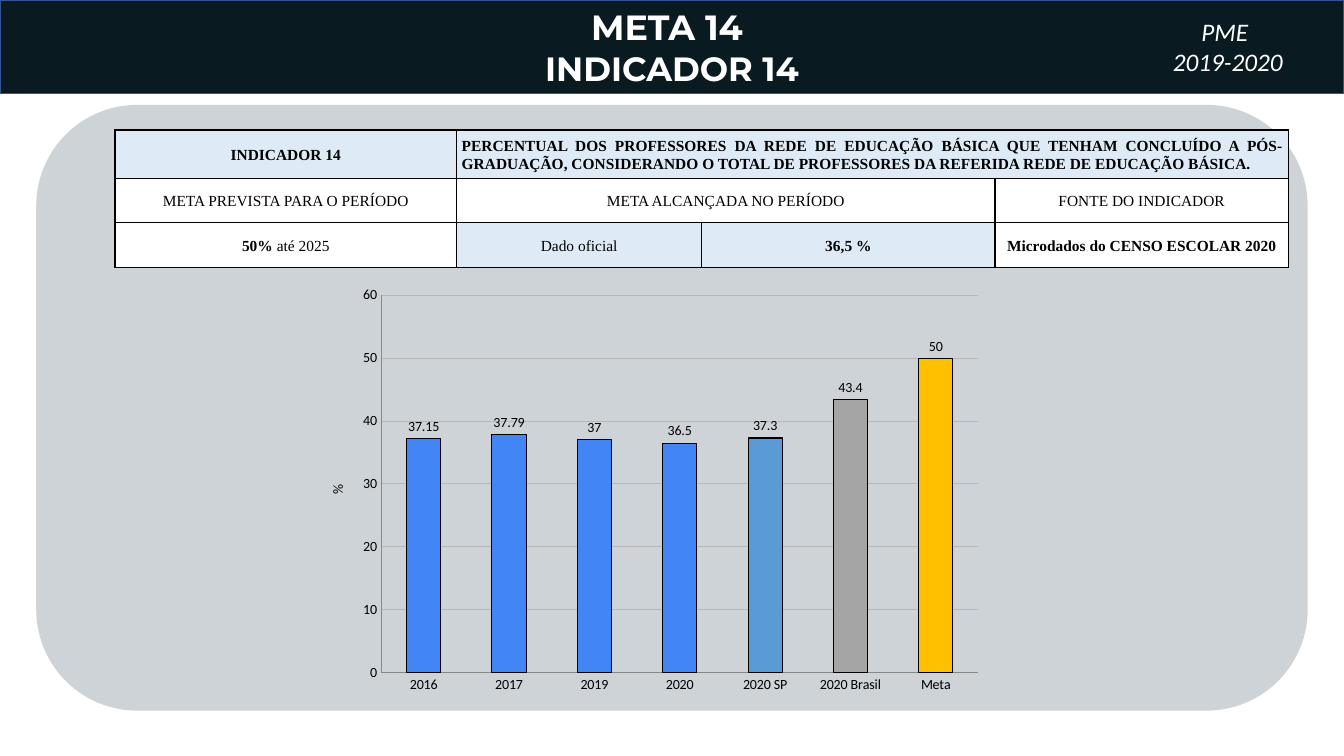
import pptx
import pptx.chart.data
import pptx.dml.color
import pptx.enum.chart
import pptx.enum.shapes
import pptx.enum.text
import pptx.oxml
import pptx.oxml.ns
import pptx.util
from dataclasses import dataclass

Pt = pptx.util.Pt
Inches = pptx.util.Inches
Align = pptx.enum.text.PP_ALIGN
Middle = pptx.enum.text.MSO_ANCHOR.MIDDLE
Shape = pptx.enum.shapes.MSO_SHAPE
qn = pptx.oxml.ns.qn


def rgb(code):
    return pptx.dml.color.RGBColor.from_string(code)


@dataclass(frozen=True)
class Theme:
    navy: str = "0A1A21"
    edge: str = "325491"
    panel: str = "CED3D8"
    pale: str = "DEEBF7"
    white: str = "FFFFFF"
    black: str = "000000"
    grid: str = "B7B7B7"
    axis: str = "888888"
    blue: str = "4285F4"
    state: str = "5B9BD5"
    nation: str = "A5A5A5"
    goal: str = "FFC000"
    head: str = "Montserrat"
    body: str = "Calibri"
    serif: str = "Times New Roman"
    title: int = 25
    sub: int = 24
    period: int = 18
    cell: int = 11
    chart: int = 10


class Page:
    def __init__(self, deck, theme):
        self.deck = deck
        self.theme = theme
        self.slide = deck.slides.add_slide(deck.slide_layouts[6])

    def wide(self, share):
        return int(self.deck.slide_width * share / 100)

    def high(self, share):
        return int(self.deck.slide_height * share / 100)

    def area(self, left, top, width, height):
        return self.wide(left), self.high(top), self.wide(width), self.high(height)

    def font(self, font, face, size, color, bold=None, italic=None):
        font.name, font.size = face, Pt(size)
        font.bold, font.italic = bold, italic
        font.color.rgb = rgb(color)

    def block(self, kind, box, fill, line=None):
        shape = self.slide.shapes.add_shape(kind, *self.area(*box))
        shape.shadow.inherit = False
        shape.fill.solid()
        shape.fill.fore_color.rgb = rgb(fill)
        if line:
            shape.line.color.rgb = rgb(line)
            shape.line.width = Pt(1)
        else:
            shape.line.fill.background()
        return shape

    def label(self, box):
        shape = self.slide.shapes.add_textbox(*self.area(*box))
        shape.text_frame.word_wrap = True
        return shape

    def words(self, shape, lines, face, sizes, **style):
        frame = shape.text_frame
        frame.text = "\n".join(lines)
        for para, size in zip(frame.paragraphs, sizes):
            para.alignment = Align.CENTER
            self.font(para.font, face, size, self.theme.white, **style)

    def border(self, cell):
        props = cell._tc.get_or_add_tcPr()
        for side in "LRTB":
            props.append(pptx.oxml.parse_xml(
                f'<a:ln{side} {pptx.oxml.ns.nsdecls("a")} w="12700"><a:solidFill>'
                f'<a:srgbClr val="{self.theme.black}"/></a:solidFill></a:ln{side}>'))

    def table(self, left, top, cols, rows, spans, cells):
        box = self.area(left, top, sum(cols), sum(rows))
        table = self.slide.shapes.add_table(len(rows), len(cols), *box).table
        table.first_row = table.horz_banding = False
        for col, width in zip(table.columns, cols):
            col.width = self.wide(width)
        for row, height in zip(table.rows, rows):
            row.height = self.high(height)
        for start, end in spans:
            table.cell(*start).merge(table.cell(*end))
        for cell in table.iter_cells():
            self.border(cell)
        for (row, col), (runs, fill, align) in cells.items():
            self.fill(table.cell(row, col), runs, fill, align)

    def fill(self, cell, runs, fill, align):
        cell.fill.solid()
        cell.fill.fore_color.rgb = rgb(fill)
        cell.vertical_anchor = Middle
        cell.margin_left = cell.margin_right = Inches(0.05)
        cell.margin_top, cell.margin_bottom = Inches(0.01), 0
        para = cell.text_frame.paragraphs[0]
        para.alignment, para.line_spacing, para.space_after = align, 1.07, Pt(8)
        bolds = {bold for _, bold in runs}
        shared = bolds.pop() if len(bolds) == 1 else None
        self.font(para.font, self.theme.serif, self.theme.cell, self.theme.black, shared)
        for text, bold in runs:
            run = para.add_run()
            run.text = text
            if shared is None:
                run.font.bold = bold

    def place(self, node, index, **spots):
        for old in node.findall(qn("c:layout")):
            node.remove(old)
        target = '<c:layoutTarget val="inner"/>' if "w" in spots else ""
        modes = "".join(f'<c:{key}Mode val="edge"/>' for key in "xy")
        sizes = "".join(f'<c:{key} val="{val}"/>' for key, val in spots.items())
        node.insert(index, pptx.oxml.parse_xml(
            f'<c:layout {pptx.oxml.ns.nsdecls("c")}><c:manualLayout>'
            f'{target}{modes}{sizes}</c:manualLayout></c:layout>'))

    def bars(self, box, unit, names, values, tints):
        look = self.theme
        data = pptx.chart.data.CategoryChartData()
        data.categories = names
        data.add_series("Series 1", values)
        kind = pptx.enum.chart.XL_CHART_TYPE.COLUMN_CLUSTERED
        chart = self.slide.shapes.add_chart(kind, *self.area(*box), data).chart
        chart.has_legend = chart.has_title = False
        self.font(chart.font, look.body, look.chart, look.black)
        self.place(chart.plots[0]._element.getparent(), 0, x=0.11, y=0.04, w=0.87, h=0.89)
        for axis in (chart.category_axis, chart.value_axis):
            axis.major_tick_mark = pptx.enum.chart.XL_TICK_MARK.NONE
            axis.format.line.color.rgb = rgb(look.axis)
        scale = chart.value_axis
        scale.minimum_scale, scale.maximum_scale, scale.major_unit = 0, 60, 10
        scale.major_gridlines.format.line.color.rgb = rgb(look.grid)
        scale.major_gridlines.format.line.width = Pt(0.75)
        frame = scale.axis_title.text_frame
        frame.text = unit
        self.font(frame.paragraphs[0].font, look.body, look.chart, look.black, False)
        frame._txBody.find(qn("a:bodyPr")).set("rot", "-5400000")
        self.place(scale.axis_title._element, 1, x=0.03, y=0.48)
        plot = chart.plots[0]
        plot.gap_width, plot.vary_by_categories = 150, False
        plot.has_data_labels = True
        plot.data_labels.show_value = True
        plot.data_labels.position = pptx.enum.chart.XL_LABEL_POSITION.OUTSIDE_END
        for index, tint in enumerate(tints):
            form = plot.series[0].points[index].format
            form.fill.solid()
            form.fill.fore_color.rgb = rgb(tint)
            form.line.color.rgb = rgb(look.black)
            form.line.width = Pt(0.75)


def main():
    deck = pptx.Presentation()
    deck.slide_width, deck.slide_height = Inches(13.33), Inches(7.5)
    look = Theme()
    page = Page(deck, look)

    banner = page.block(Shape.RECTANGLE, (0, 0, 100, 12.4), look.navy, look.edge)
    page.words(banner, ["META 14 ", "INDICADOR 14"], look.head,
               [look.title, look.sub], bold=True)
    page.block(Shape.ROUNDED_RECTANGLE, (2.7, 13.87, 94.6, 80.13), look.panel)

    mid = Align.CENTER
    page.table(
        8.55, 17.2, [25.43, 18.23, 21.83, 21.83], [6.4, 5.87, 5.87],
        [((0, 1), (0, 3)), ((1, 1), (1, 2))],
        {
            (0, 0): ([("INDICADOR 14", True)], look.pale, mid),
            (0, 1): ([("PERCENTUAL DOS PROFESSORES DA REDE DE EDUCAÇÃO BÁSICA QUE "
                       "TENHAM CONCLUÍDO A PÓS-GRADUAÇÃO, CONSIDERANDO O TOTAL DE "
                       "PROFESSORES DA REFERIDA REDE DE EDUCAÇÃO BÁSICA.", True)],
                     look.pale, Align.JUSTIFY),
            (1, 0): ([("META PREVISTA PARA O PERÍODO", False)], look.white, mid),
            (1, 1): ([("META ALCANÇADA NO PERÍODO", False)], look.white, mid),
            (1, 3): ([("FONTE DO INDICADOR", False)], look.white, mid),
            (2, 0): ([("50%", True), (" até 2025", False)], look.white, mid),
            (2, 1): ([("Dado oficial", False)], look.pale, mid),
            (2, 2): ([("36,5 %", True)], look.pale, mid),
            (2, 3): ([("Microdados do CENSO ESCOLAR 2020", True)], look.white, mid),
        })

    page.bars((22.73, 36.8, 51.1, 56.13), "%",
              ["2016", "2017", "2019", "2020", "2020 SP", "2020 Brasil", "Meta"],
              [37.15, 37.79, 37, 36.5, 37.3, 43.4, 50],
              [look.blue] * 4 + [look.state, look.nation, look.goal])

    period = page.label((82.7, 1.47, 17.3, 9.47))
    page.words(period, ["PME ", "2019-2020"], look.body, [look.period] * 2, italic=True)
    deck.save("out.pptx")


if __name__ == "__main__":
    main()
